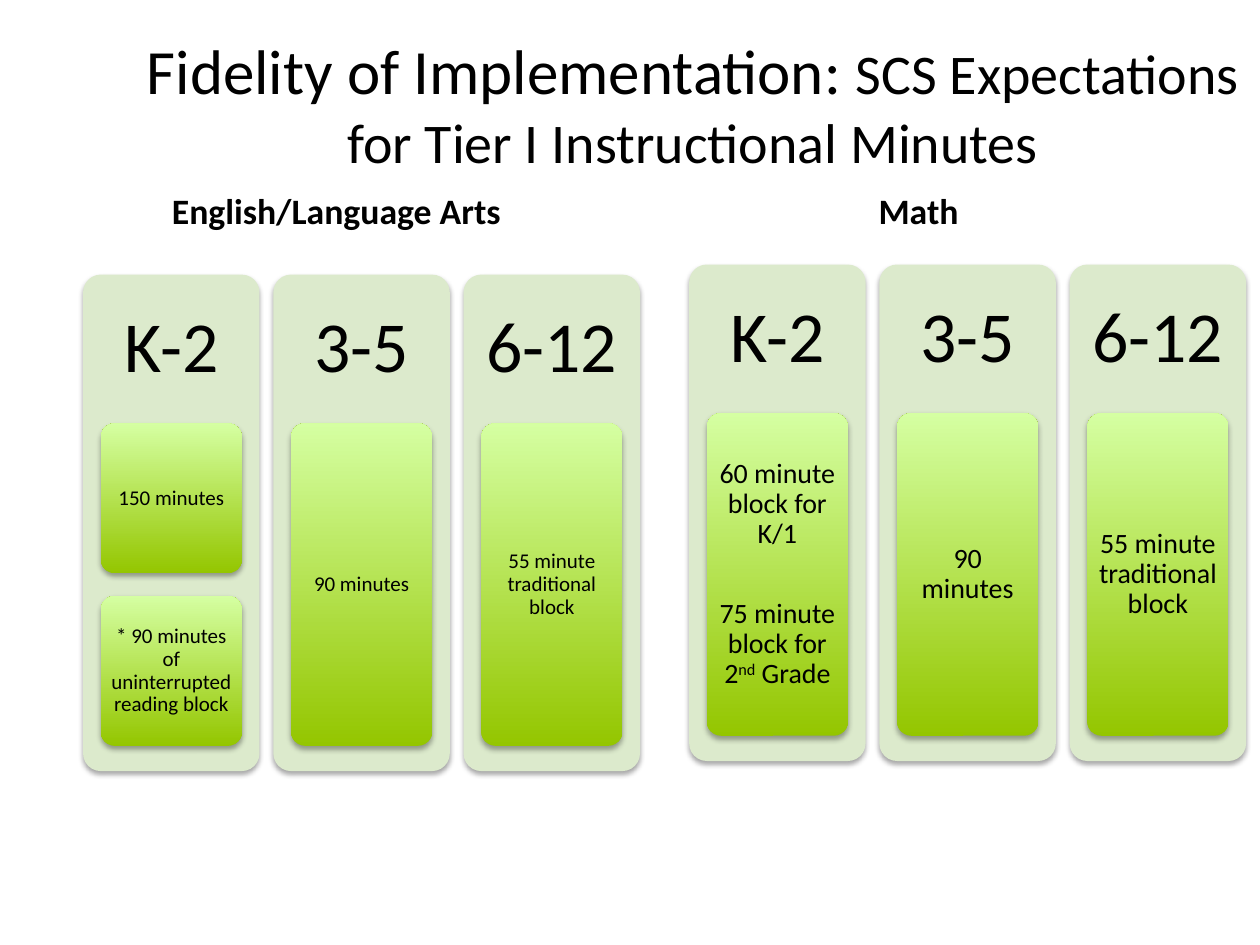
from dataclasses import dataclass

from lxml.etree import SubElement as Sub
from pptx import Presentation as Deck
from pptx.dml.color import RGBColor as Rgb
from pptx.enum.shapes import MSO_SHAPE as Kind
from pptx.enum.text import MSO_ANCHOR as Anchor, PP_ALIGN as Align
from pptx.oxml.ns import qn
from pptx.util import Inches, Pt


@dataclass(frozen=True)
class Theme:
    font: str = "Calibri"
    ink: str = "000000"
    panel: str = "DCEACC"
    dark: str = "94C600"
    light: str = "D5FFA2"
    title: float = 36
    sub: float = 32
    head: float = 20.4
    grade: float = 41
    small: float = 12
    large: float = 16


def write(frame, text, *, size, font, color, bold=False, anchor=Anchor.MIDDLE,
          pad=(0.1, 0.05, 0.1, 0.05), line=None, gap=0):
    """Fill a frame with paragraphs, each a list of (text, size, baseline) runs."""
    frame.word_wrap = True
    frame.vertical_anchor = anchor
    frame.margin_left, frame.margin_top, frame.margin_right, frame.margin_bottom = map(Inches, pad)
    paras = [[(text,)]] if isinstance(text, str) else text
    for i, runs in enumerate(paras):
        para = frame.add_paragraph() if i else frame.paragraphs[0]
        para.alignment = Align.CENTER
        para.space_before = Pt(gap if i else 0)
        if line:
            para.line_spacing = line
        for words, *rest in runs:
            run = para.add_run()
            run.text = words
            run.font.name = font
            run.font.size = Pt(rest[0] if rest else size)
            run.font.bold = bold
            run.font.color.rgb = Rgb.from_string(color)
            if len(rest) > 1:
                run._r.get_or_add_rPr().set("baseline", str(rest[1]))


class Board:
    """Hold the theme and the current slide, and draw each kind of element."""

    def __init__(self, slide, theme):
        self.slide = slide
        self.theme = theme
        self.base = {"font": theme.font, "color": theme.ink}

    def title(self, text, box):
        item = self.slide.shapes.title
        item.left, item.top, item.width, item.height = map(Inches, box)
        write(item.text_frame, text, size=self.theme.title, **self.base)

    def label(self, shapes, text, box, **form):
        item = shapes.add_textbox(*map(Inches, box))
        write(item.text_frame, text, **self.base, **form)

    def card(self, shapes, box):
        item = shapes.add_shape(Kind.ROUNDED_RECTANGLE, *map(Inches, box))
        item.adjustments[0] = 0.1
        item.line.fill.background()
        item.shadow.inherit = False
        glow = Sub(item._element.spPr.find(qn("a:effectLst")), qn("a:outerShdw"),
                   blurRad=str(Pt(3.1)), dist=str(Pt(1.8)), dir="5400000", rotWithShape="0")
        tint = Sub(glow, qn("a:srgbClr"), val=self.theme.ink)
        Sub(tint, qn("a:alpha"), val="35000")
        return item

    def panel(self, shapes, box):
        fill = self.card(shapes, box).fill
        fill.solid()
        fill.fore_color.rgb = Rgb.from_string(self.theme.panel)

    def block(self, shapes, text, box, size):
        item = self.card(shapes, box)
        item.fill.gradient()
        item.fill.gradient_angle = 90
        for stop, color in zip(item.fill.gradient_stops, (self.theme.dark, self.theme.light)):
            stop.color.rgb = Rgb.from_string(color)
        write(item.text_frame, text, size=size, pad=(0.03,) * 4, line=0.9, gap=28.5, **self.base)

    def chart(self, left, top, cols, size):
        """Draw one subject as a group of grade columns."""
        wide, tall, step, head = 1.4, 3.94, 1.51, 1.18
        inset, body, gap = 0.14, 2.56, 0.18
        shapes = self.slide.shapes.add_group_shape().shapes
        for i, (grade, cells) in enumerate(cols):
            x = left + i * step
            self.panel(shapes, (x, top, wide, tall))
            self.label(shapes, grade, (x, top, wide, head),
                       size=self.theme.grade, pad=(0.17,) * 4, line=0.9)
            high = (body - gap * (len(cells) - 1)) / len(cells)
            for j, text in enumerate(cells):
                y = top + head + j * (high + gap)
                self.block(shapes, text, (x + inset, y, wide - 2 * inset, high), size)


def main():
    theme = Theme()
    deck = Deck()
    deck.slide_width, deck.slide_height = Inches(10), Inches(7.5)
    board = Board(deck.slides.add_slide(deck.slide_layouts[5]), theme)
    board.title([[("Fidelity of Implementation: ",),
                  ("SCS Expectations for Tier I Instructional Minutes", theme.sub)]],
                (1, 0.15, 9, 1.34))

    for text, left, right in (("English/Language Arts", 0.66, 0.5), ("Math", 5.08, 0.1)):
        board.label(board.slide.shapes, text, (left, 1.5, 4.42, 0.39), size=theme.head,
                    bold=True, anchor=Anchor.BOTTOM, pad=(0.1, 0.05, right, 0.05))

    later = [("3-5", ["90 minutes"]), ("6-12", ["55 minute traditional block"])]
    reading = ["150 minutes", "* 90 minutes of uninterrupted reading block"]
    maths = [[[("60 minute block for K/1",)],
              [("75 minute block for 2",), ("nd", theme.large, 30000), (" Grade",)]]]
    board.chart(0.66, 2.18, [("K-2", reading), *later], theme.small)
    board.chart(5.47, 2.1, [("K-2", maths), *later], theme.large)
    deck.save("out.pptx")


if __name__ == "__main__":
    main()
